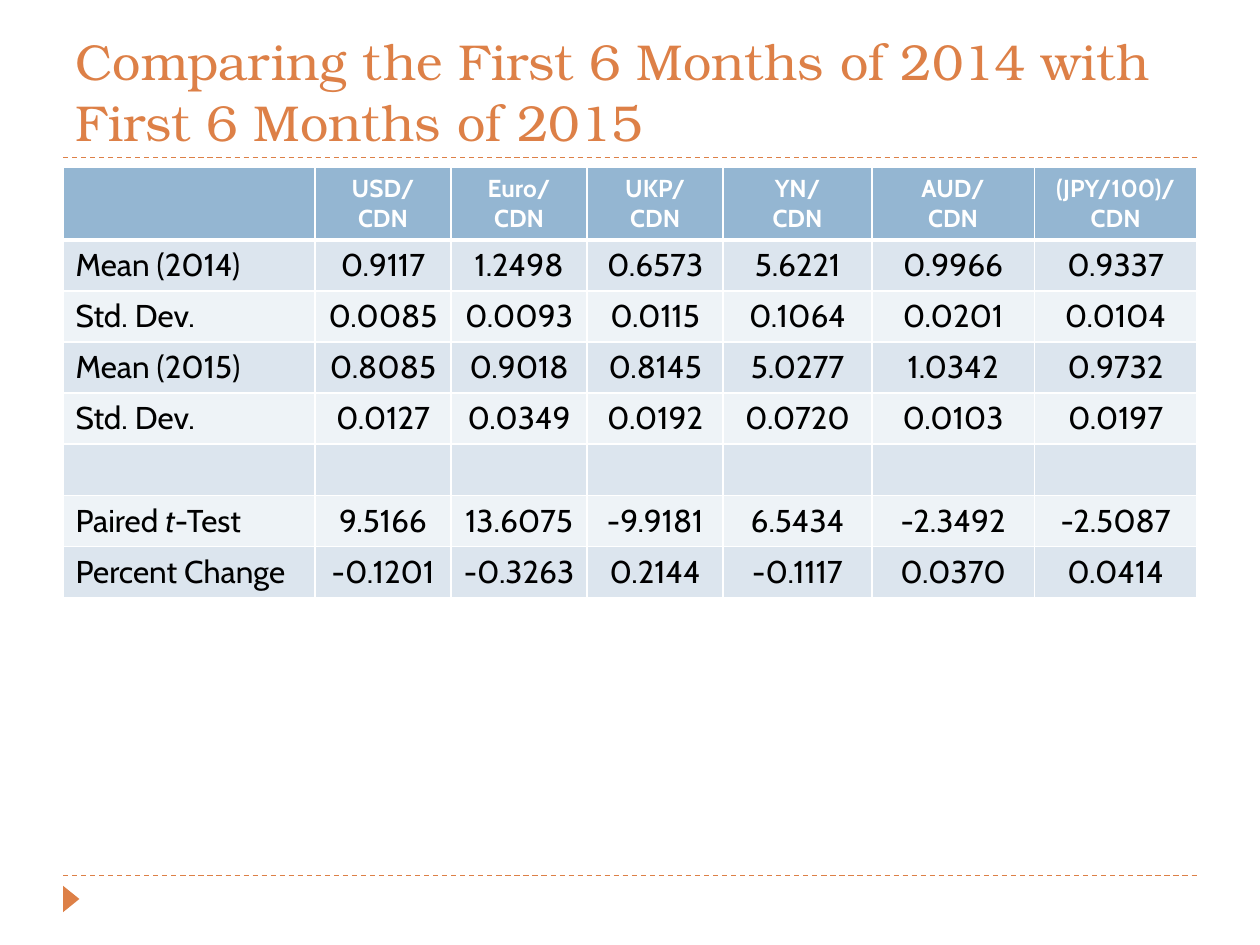
from lxml.etree import SubElement
from pptx import Presentation
from pptx.dml.color import RGBColor
from pptx.enum.dml import MSO_LINE
from pptx.enum.shapes import MSO_CONNECTOR, MSO_SHAPE
from pptx.enum.text import MSO_ANCHOR, MSO_AUTO_SIZE, PP_ALIGN
from pptx.oxml.ns import qn
from pptx.util import Inches, Pt

TITLE = "Comparing the First 6 Months of 2014 with First 6 Months of 2015"
CURRENCIES = ["", "USD/\vCDN", "Euro/\vCDN", "UKP/\vCDN", "YN/\vCDN", "AUD/\vCDN", "(JPY/100)/\vCDN"]
STATISTICS = [
    ["Mean (2014)", "0.9117", "1.2498", "0.6573", "5.6221", "0.9966", "0.9337"],
    ["Std. Dev.", "0.0085", "0.0093", "0.0115", "0.1064", "0.0201", "0.0104"],
    ["Mean (2015)", "0.8085", "0.9018", "0.8145", "5.0277", "1.0342", "0.9732"],
    ["Std. Dev.", "0.0127", "0.0349", "0.0192", "0.0720", "0.0103", "0.0197"],
    [""] * 7,
    ["Paired *t*-Test", "9.5166", "13.6075", "-9.9181", "6.5434", "-2.3492", "-2.5087"],
    ["Percent Change", "-0.1201", "-0.3263", "0.2144", "-0.1117", "0.0370", "0.0414"],
]
COLUMN_WIDTHS = [20, 10.8, 10.8, 10.8, 11.8, 12.9, 12.9]
GRID_COLUMNS, GRID_ROWS = 100, 75


def color(hex_code):
    return RGBColor.from_string(hex_code)


class Deck:
    accent, header = "DD8047", "94B6D2"
    bands = ["DCE5EE", "EEF3F7"]
    white, black = "FFFFFF", "000000"
    heading_font, body_font = "TeX Gyre Bonum", "Cabin"

    def __init__(self):
        self.presentation = Presentation()
        self.presentation.slide_width = Inches(10)
        self.presentation.slide_height = Inches(7.5)
        self.slide = self.presentation.slides.add_slide(self.presentation.slide_layouts[5])

    def col(self, count):
        return round(self.presentation.slide_width * count / GRID_COLUMNS)

    def row(self, count):
        return round(self.presentation.slide_height * count / GRID_ROWS)

    def box(self, left, top, width, height):
        return self.col(left), self.row(top), self.col(width), self.row(height)

    def title(self, text, *area):
        heading = self.slide.shapes.title
        heading.left, heading.top, heading.width, heading.height = self.box(*area)
        frame = heading.text_frame
        frame.text = text
        frame.word_wrap = True
        frame.auto_size = MSO_AUTO_SIZE.NONE
        frame.vertical_anchor = MSO_ANCHOR.BOTTOM
        paragraph = frame.paragraphs[0]
        paragraph.alignment = PP_ALIGN.LEFT
        self.style(paragraph, self.heading_font, 28.8, self.accent)

    def style(self, paragraph, name, size, hex_code, bold=False):
        font = paragraph.font
        font.name, font.size, font.bold = name, Pt(size), bold
        font.color.rgb = color(hex_code)

    def rule(self, left, right, top):
        line = self.slide.shapes.add_connector(
            MSO_CONNECTOR.STRAIGHT, self.col(left), self.row(top), self.col(right), self.row(top))
        line.line.color.rgb = color(self.accent)
        line.line.width = Pt(0.75)
        line.line.dash_style = MSO_LINE.DASH
        SubElement(line._element.spPr, qn("a:effectLst"))

    def marker(self, *area):
        triangle = self.slide.shapes.add_shape(MSO_SHAPE.ISOSCELES_TRIANGLE, *self.box(*area))
        triangle.rotation = 90
        triangle.shadow.inherit = False
        triangle.fill.solid()
        triangle.fill.fore_color.rgb = color(self.accent)
        triangle.line.fill.background()

    def borders(self, cell, **widths):
        properties = cell._tc.get_or_add_tcPr()
        for position, (side, width) in enumerate(widths.items()):
            edge = properties.makeelement(qn(f"a:{side}"), {"w": str(Pt(width))})
            fill = SubElement(edge, qn("a:solidFill"))
            SubElement(fill, qn("a:srgbClr"), val=self.white)
            properties.insert(position, edge)

    def cell(self, cell, text, is_header, is_label, fill):
        paragraph = cell.text_frame.paragraphs[0]
        if "*" in text:
            for index, part in enumerate(text.split("*")):
                run = paragraph.add_run()
                run.text = part
                run.font.italic = index % 2 == 1
        else:
            paragraph.text = text
        paragraph.alignment = PP_ALIGN.LEFT if is_label else PP_ALIGN.CENTER
        if is_header:
            cell.vertical_anchor = MSO_ANCHOR.BOTTOM
            self.style(paragraph, self.body_font, 14, self.white, bold=True)
        else:
            self.style(paragraph, self.body_font, 18, self.black)
        cell.fill.solid()
        cell.fill.fore_color.rgb = color(fill)

    def table(self, rows, widths, left, top, height, header_height):
        frame = self.slide.shapes.add_table(
            len(rows), len(widths), *self.box(left, top, sum(widths), height))
        grid = frame.table
        for column, width in zip(grid.columns, widths):
            column.width = self.col(width)
        body_height = (height - header_height) / (len(rows) - 1)
        for r, texts in enumerate(rows):
            grid.rows[r].height = self.row(body_height if r else header_height)
            fill = self.bands[(r - 1) % 2] if r else self.header
            for c, text in enumerate(texts):
                cell = grid.cell(r, c)
                self.cell(cell, text, r == 0, c == 0, fill)
                self.borders(cell, lnL=1, lnR=1, lnT=3 if r == 1 else 1, lnB=1 if r else 3)


def main():
    deck = Deck()
    for top in (69.5, 12.5):
        deck.rule(5, 95, top)
    deck.marker(4.6, 70.7, 2.1, 1.3)
    deck.title(TITLE, 5, 1.7, 90, 10.8)
    deck.table([CURRENCIES] + STATISTICS, COLUMN_WIDTHS, 5, 13.3, 34.1, 5.7)
    deck.presentation.save("out.pptx")


if __name__ == "__main__":
    main()
